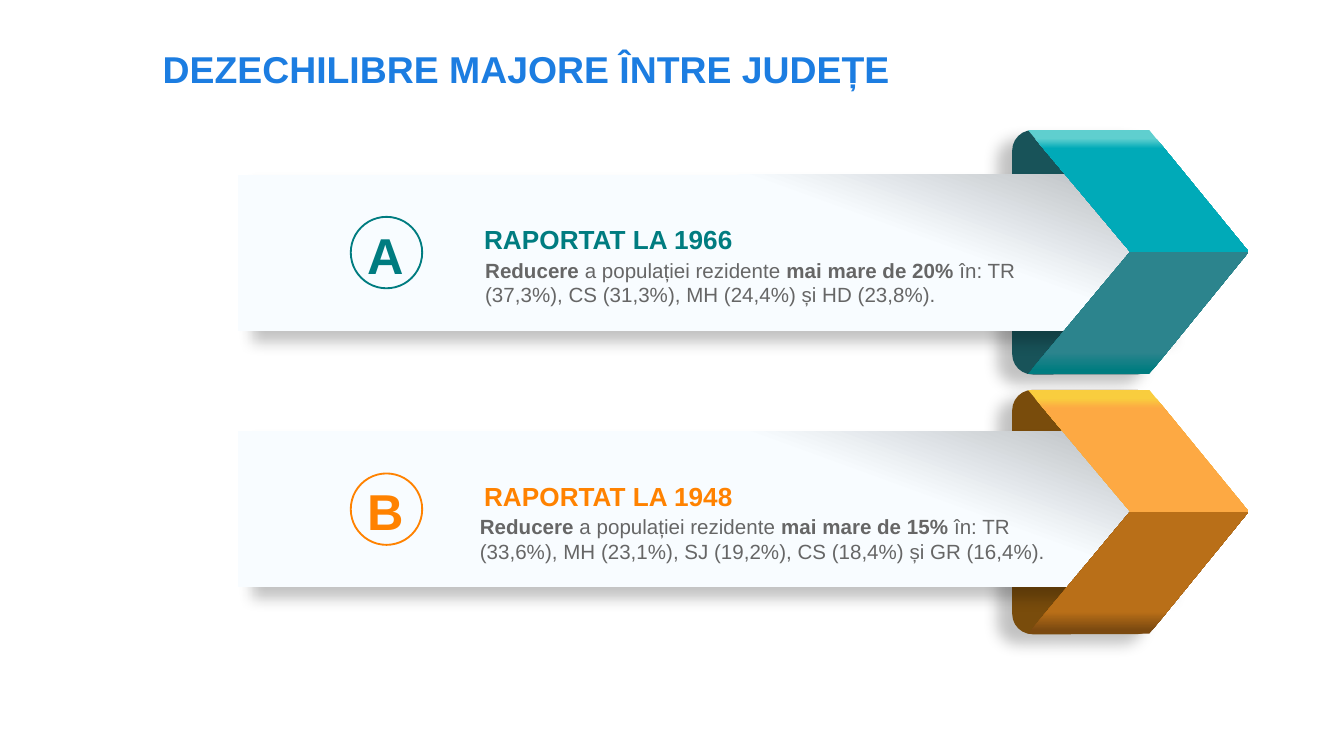
import pptx
import pptx.dml.color
import pptx.enum.shapes
import pptx.enum.text
import pptx.oxml
import pptx.oxml.ns
import pptx.util
from lxml import etree

Cm = pptx.util.Cm
Pt = pptx.util.Pt
RGBColor = pptx.dml.color.RGBColor
Shapes = pptx.enum.shapes.MSO_SHAPE
Align = pptx.enum.text.PP_ALIGN
qn = pptx.oxml.ns.qn

BLUE = RGBColor(0x1C, 0x7D, 0xE1)
GREY = RGBColor(0x66, 0x66, 0x66)
BLACK = RGBColor(0x00, 0x00, 0x00)
PAPER = RGBColor(0xF8, 0xFC, 0xFF)
SHADE = RGBColor(0xB8, 0xBC, 0xC0)
TEAL = RGBColor(0x00, 0x7C, 0x80)
TEAL_FOLD = RGBColor(0x18, 0x53, 0x59)
TEAL_LOW = RGBColor(0x2C, 0x84, 0x8D)
TEAL_EDGE = RGBColor(0x5F, 0xCF, 0xCF)
TEAL_HIGH = RGBColor(0x00, 0xAA, 0xB8)
ORANGE = RGBColor(0xFF, 0x82, 0x00)
ORANGE_FOLD = RGBColor(0x79, 0x4C, 0x0C)
ORANGE_DARK = RGBColor(0x7B, 0x49, 0x10)
ORANGE_LOW = RGBColor(0xB9, 0x6F, 0x18)
ORANGE_EDGE = RGBColor(0xF9, 0xCD, 0x3E)
ORANGE_HIGH = RGBColor(0xFD, 0xA9, 0x43)


class SlideBuilder:
    font_name = "Arial"

    def __init__(self, slide):
        self.slide = slide

    def style(self, paragraph, size, color, align, bold=None):
        paragraph.alignment = align
        font = paragraph.font
        font.name = self.font_name
        font.size = Pt(size)
        font.color.rgb = color
        font.bold = bold

    def title(self, text, left, top, width, height):
        shape = self.slide.shapes.title
        shape.left, shape.top = Cm(left), Cm(top)
        shape.width, shape.height = Cm(width), Cm(height)
        frame = shape.text_frame
        frame.text = text
        frame.word_wrap = True
        frame.auto_size = pptx.enum.text.MSO_AUTO_SIZE.NONE
        frame.vertical_anchor = pptx.enum.text.MSO_ANCHOR.MIDDLE
        self.style(frame.paragraphs[0], 20, BLUE, Align.JUSTIFY, True)

    def text(self, runs, left, top, width, height, size, color, inset, align=Align.LEFT):
        box = self.slide.shapes.add_textbox(Cm(left), Cm(top), Cm(width), Cm(height))
        frame = box.text_frame
        frame.word_wrap = True
        frame.margin_left = frame.margin_right = Cm(inset)
        frame.margin_top = frame.margin_bottom = Cm(inset)
        paragraph = frame.paragraphs[0]
        self.style(paragraph, size, color, align)
        for words, bold in runs:
            run = paragraph.add_run()
            run.text = words
            run.font.bold = bold

    def shape(self, kind, left, top, width, height):
        shape = self.slide.shapes.add_shape(kind, Cm(left), Cm(top), Cm(width), Cm(height))
        shape.shadow.inherit = False
        shape.line.fill.background()
        return shape

    def gradient(self, shape, stops, angle):
        shape.fill.gradient()
        shape.fill.gradient_angle = 360 - angle
        stop_list = shape.element.spPr.find(".//" + qn("a:gsLst"))
        for stop in list(stop_list):
            stop_list.remove(stop)
        for position, color in stops:
            stop = etree.SubElement(stop_list, qn("a:gs"), pos=str(position * 1000))
            etree.SubElement(stop, qn("a:srgbClr"), val=str(color))

    def shadow(self, shape, direction):
        effects = shape.element.spPr.find(qn("a:effectLst"))
        outer = etree.SubElement(
            effects, qn("a:outerShdw"), blurRad=str(Pt(8)), dist=str(Pt(9.3)),
            dir=str(direction * 60000), algn="ctr", rotWithShape="0")
        color = etree.SubElement(outer, qn("a:srgbClr"), val=str(BLACK))
        etree.SubElement(color, qn("a:alpha"), val="23000")

    def fold(self, top, color):
        fold = self.shape(Shapes.ROUNDED_RECTANGLE, 19.13, top, 2.74, 4.62)
        fold.adjustments[0] = 0.141
        fold.fill.solid()
        fold.fill.fore_color.rgb = color
        self.shadow(fold, 148)

    def banner(self, top):
        banner = self.shape(Shapes.RECTANGLE, 4.5, top, 17.37, 2.95)
        self.gradient(banner, [(0, PAPER), (69, PAPER), (99, SHADE), (100, SHADE)], 290)
        self.shadow(banner, 35)

    def chevron_half(self, outer, middle, stops, angle):
        builder = self.slide.shapes.build_freeform(Cm(19.43), Cm(outer))
        builder.add_line_segments(
            [(Cm(21.72), Cm(outer)), (Cm(23.6), Cm(middle)), (Cm(21.36), Cm(middle))])
        half = builder.convert_to_shape()
        half.shadow.inherit = False
        half.line.fill.background()
        self.gradient(half, stops, angle)

    def badge(self, letter, top, color):
        self.text([(letter, True)], 6.6, top, 1.37, 1.55, 27, color, 0.13, Align.CENTER)
        ring = self.shape(Shapes.OVAL, 6.63, top, 1.35, 1.35)
        ring.fill.background()
        ring.line.color.rgb = color
        ring.line.width = Pt(1)

    def panel(self, arrow_top, banner_top, letter, heading, body, body_left, color,
              fold, low_edge, low, high_edge, high):
        middle = arrow_top + 2.3
        self.fold(arrow_top, fold)
        self.banner(banner_top)
        self.chevron_half(arrow_top + 4.61, middle,
                          [(0, low_edge), (3, low_edge), (18, low), (100, low)], 270)
        self.chevron_half(arrow_top, middle,
                          [(0, high_edge), (7, high_edge), (15, high), (100, high)], 90)
        self.text(body, body_left, banner_top + 1.52, 11.23, 0.66, 11, GREY, 0.05)
        self.text([(heading, True)], 9.02, banner_top + 0.8, 11.3, 0.91, 14, color, 0.13)
        self.badge(letter, banner_top + 0.8, color)


def main():
    presentation = pptx.Presentation()
    presentation.slide_width = Cm(25.4)
    presentation.slide_height = Cm(14.29)
    slide = presentation.slides.add_slide(presentation.slide_layouts[5])
    builder = SlideBuilder(slide)
    builder.title("DEZECHILIBRE MAJORE ÎNTRE JUDEȚE", 2.82, 0.25, 20.9, 2.08)
    builder.panel(
        2.46, 3.3, "A", "RAPORTAT LA 1966",
        [("Reducere", True), (" a populației rezidente ", False), ("mai mare de 20% ", True),
         ("în: TR (37,3%), CS (31,3%), MH (24,4%) și HD (23,8%).", False)],
        9.12, TEAL, TEAL_FOLD, TEAL, TEAL_LOW, TEAL_EDGE, TEAL_HIGH)
    builder.panel(
        7.37, 8.15, "B", "RAPORTAT LA 1948",
        [("Reducere", True), (" a populației rezidente ", False), ("mai mare de 15% ", True),
         ("în: TR (33,6%), MH (23,1%), SJ (19,2%), CS (18,4%) și GR (16,4%).", False)],
        9.02, ORANGE, ORANGE_FOLD, ORANGE_DARK, ORANGE_LOW, ORANGE_EDGE, ORANGE_HIGH)
    presentation.save("out.pptx")


if __name__ == "__main__":
    main()
